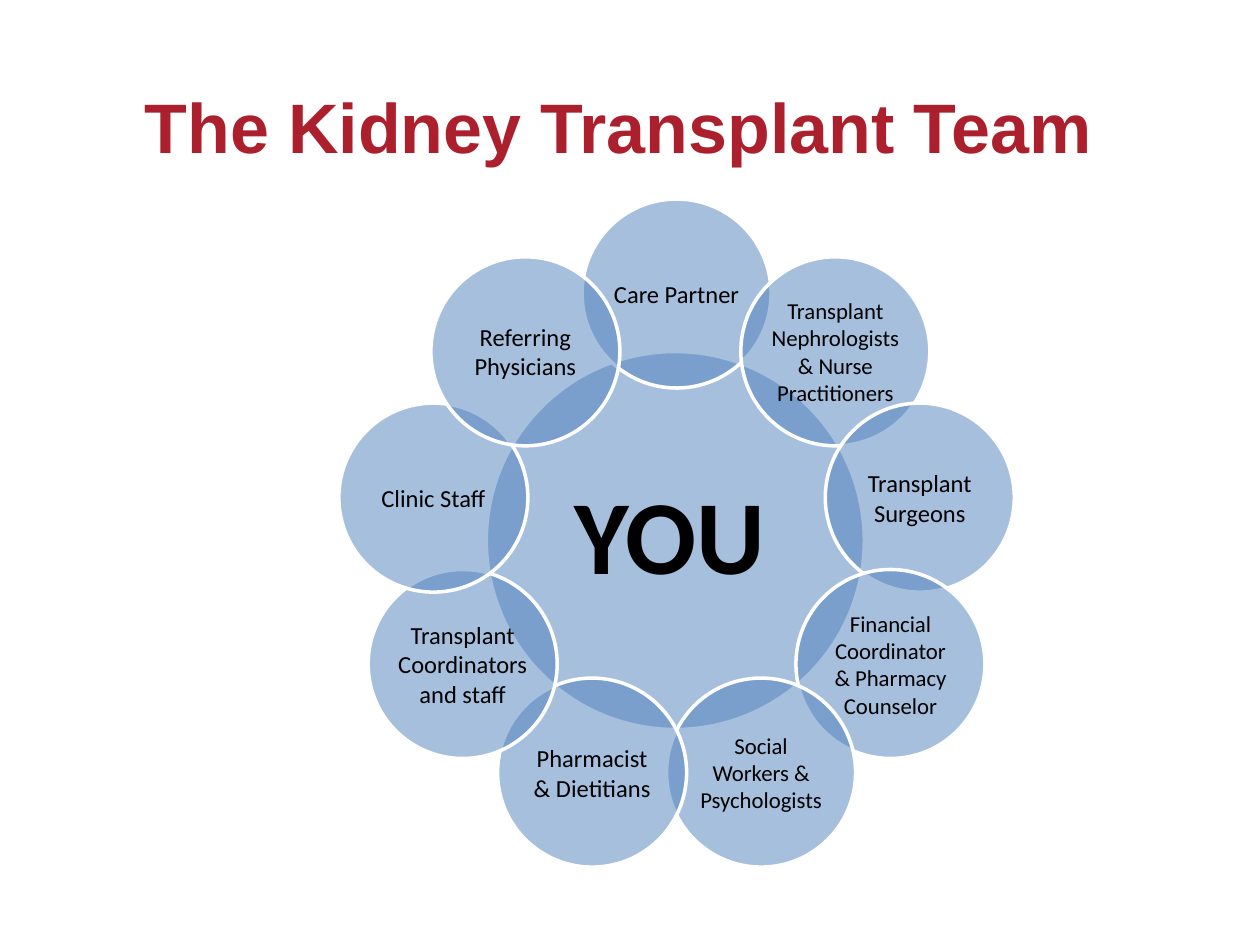
"""Build the kidney transplant team slide: a hub circle ringed by team roles."""
from math import cos, radians, sin

from pptx import Presentation
from pptx.dml.color import RGBColor
from pptx.enum.shapes import MSO_SHAPE
from pptx.enum.text import MSO_ANCHOR, PP_ALIGN
from pptx.oxml.ns import qn
from pptx.util import Inches, Pt

COLORS = {"title": "AC1F2D", "circle": "4F81BD", "outline": "FFFFFF", "label": "000000"}
HUB_X, HUB_Y, HUB_SIZE = 5.36, 4.29, 3
RING_X, RING_RADIUS, ROLE_SIZE = 5.37, 1.96, 1.5
ROLES = [
    ("Care Partner", 14, 0.02, 0),
    ("Transplant Nephrologists & Nurse Practitioners", 13, 0.01, 0),
    ("Transplant Surgeons", 14, 0.02, 0),
    ("Financial Coordinator & Pharmacy Counselor", 13, 0.02, 0),
    ("Social Workers & Psychologists", 13, 0.02, 0),
    ("Pharmacist & Dietitians", 14, 0.02, 0),
    ("Transplant Coordinators and staff", 14, 0, 0),
    ("Clinic Staff", 14, 0.02, 0),
    ("Referring Physicians", 14, 0.02, 0.06),
]


def color(name):
    return RGBColor.from_string(COLORS[name])


def write_text(frame, text, font_name, size, color_name, inset, bold=False):
    frame.word_wrap = True
    frame.margin_left, frame.margin_top, frame.margin_right, frame.margin_bottom = map(Inches, inset)
    frame.text = text
    paragraph = frame.paragraphs[0]
    font = paragraph.runs[0].font
    font.name, font.size, font.bold = font_name, Pt(size), bold
    font.color.rgb = color(color_name)
    return paragraph


def add_title(slide, text):
    frame = slide.shapes.add_textbox(Inches(1.05), Inches(0.42), Inches(8.32), Inches(0.92)).text_frame
    frame.vertical_anchor = MSO_ANCHOR.BOTTOM
    paragraph = write_text(frame, text, "Arial", 40, "title", (0.1, 0, 0.1, 0), True)
    paragraph.alignment = PP_ALIGN.LEFT
    paragraph.line_spacing = 0.9


def add_circle(slide, center_x, center_y, diameter, text, size, inset, bold=False):
    circle = slide.shapes.add_shape(
        MSO_SHAPE.OVAL, Inches(center_x - diameter / 2), Inches(center_y - diameter / 2),
        Inches(diameter), Inches(diameter))
    circle.shadow.inherit = False
    circle.fill.solid()
    circle.fill.fore_color.rgb = color("circle")
    fill_color = circle.fill._xPr.find(qn("a:solidFill"))[0]
    fill_color.append(fill_color.makeelement(qn("a:alpha"), {"val": "50000"}))
    circle.line.color.rgb = color("outline")
    circle.line.width = Pt(2)
    circle.text_frame.vertical_anchor = MSO_ANCHOR.MIDDLE
    paragraph = write_text(circle.text_frame, text, "Calibri", size, "label", inset, bold)
    paragraph.alignment = PP_ALIGN.CENTER
    return paragraph


def add_ring(slide):
    for index, (role, size, margin, shift) in enumerate(ROLES):
        angle = radians(index * 360 / len(ROLES))
        add_circle(slide, RING_X + RING_RADIUS * sin(angle) + shift,
                   HUB_Y - RING_RADIUS * cos(angle), ROLE_SIZE, role, size, [margin] * 4)


def main():
    prs = Presentation()
    prs.slide_width, prs.slide_height = Inches(10), Inches(7.5)
    slide = prs.slides.add_slide(prs.slide_layouts[6])
    add_title(slide, "The Kidney Transplant Team")
    hub_label = add_circle(slide, HUB_X, HUB_Y, HUB_SIZE, "YOU", 60, (0.08, 0.08, 0.17, 0.08), True)
    hub_label.line_spacing = 0.9
    add_ring(slide)
    prs.save("out.pptx")


if __name__ == "__main__":
    main()
